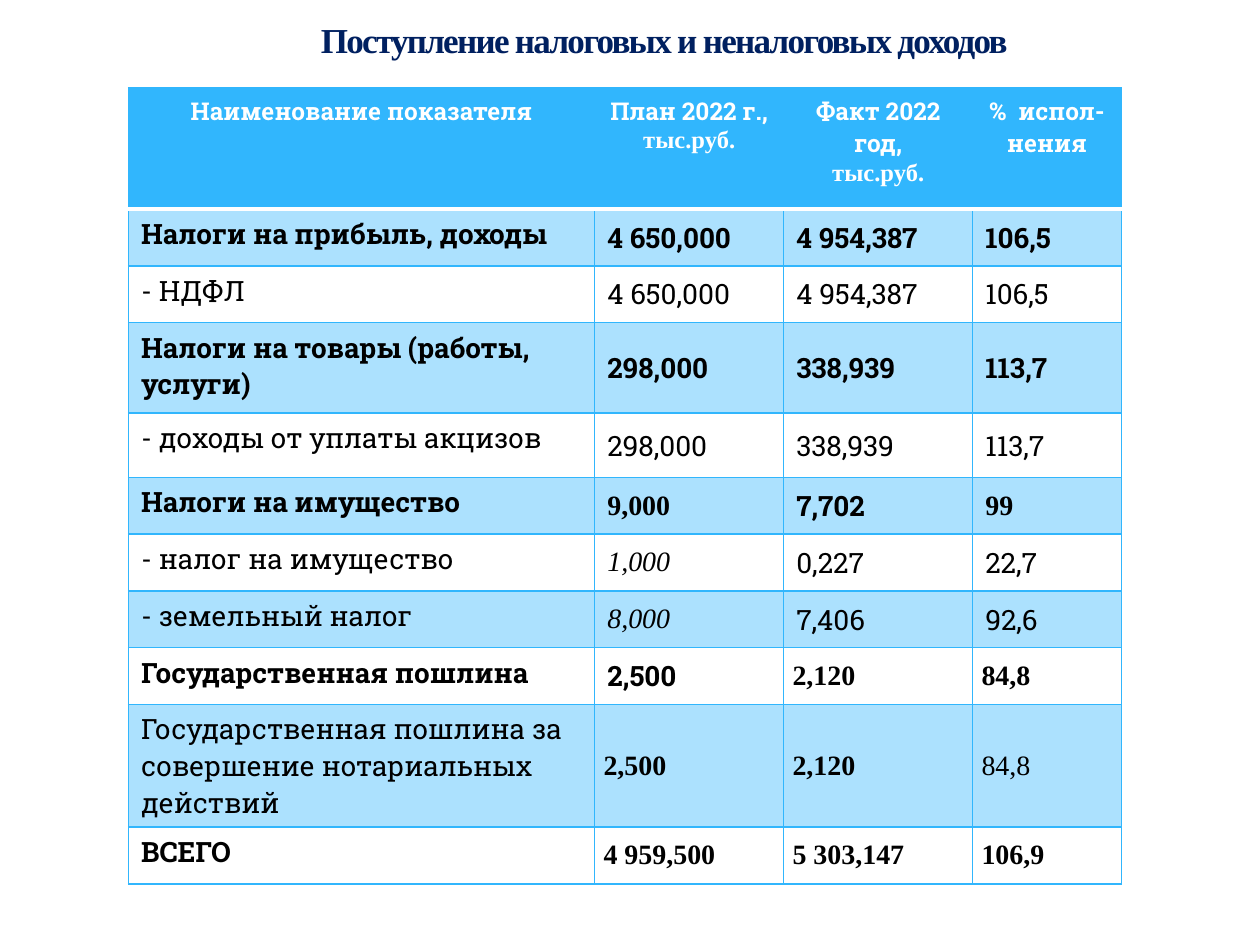
from dataclasses import dataclass

from lxml import etree
from pptx import Presentation
from pptx import util as u
from pptx.dml.color import RGBColor
from pptx.enum import text
from pptx.oxml import ns


@dataclass(frozen=True)
class Theme:
    blue: str = "31B6FD"
    navy: str = "002060"
    white: str = "FFFFFF"
    black: str = "000000"
    slab: str = "Roboto Slab"
    times: str = "Times New Roman"
    title_size: int = 20
    head_size: int = 14
    body_size: int = 16
    band_alpha: int = 40


@dataclass(frozen=True)
class Style:
    font: str
    bold: bool = False
    italic: bool = False
    tight: bool = False


THEME = Theme()
PLAIN = Style(THEME.slab)
BOLD = Style(THEME.slab, bold=True)
TIMES_BOLD = Style(THEME.times, bold=True)
TIMES_ITALIC = Style(THEME.times, italic=True)
TIGHT = Style(THEME.times, tight=True)
TIGHT_BOLD = Style(THEME.times, bold=True, tight=True)

COLUMN_WIDTHS = [3.7, 1.5, 1.5, 1.18]
ROW_HEIGHTS = [0.96, 0.45, 0.45, 0.72, 0.51, 0.45, 0.45, 0.45, 0.45, 0.71, 0.45]

TITLE = "Поступление налоговых и неналоговых доходов"
UNIT = "тыс.руб."
HEADERS = [
    ["Наименование показателя"],
    ["План 2022 г.,", UNIT],
    ["Факт 2022 год,", UNIT],
    ["%  испол-нения"],
]

# Texts of each row, then the style of each of its cells
ROWS = [
    (["Налоги на прибыль, доходы", "4 650,000", "4 954,387", "106,5"], [BOLD] * 4),
    (["- НДФЛ", "4 650,000", "4 954,387", "106,5"], [PLAIN] * 4),
    (["Налоги на товары (работы, услуги)", "298,000", "338,939", "113,7"], [BOLD] * 4),
    (["- доходы от уплаты акцизов", "298,000", "338,939", "113,7"], [PLAIN] * 4),
    (["Налоги на имущество", "9,000", "7,702", "99"],
     [BOLD, TIMES_BOLD, BOLD, TIMES_BOLD]),
    (["- налог на имущество", "1,000", "0,227", "22,7"],
     [PLAIN, TIMES_ITALIC, PLAIN, PLAIN]),
    (["- земельный налог", "8,000", "7,406", "92,6"],
     [PLAIN, TIMES_ITALIC, PLAIN, PLAIN]),
    (["Государственная пошлина", "2,500", "2,120", "84,8"],
     [BOLD, BOLD, TIGHT_BOLD, TIGHT_BOLD]),
    (["Государственная пошлина за совершение нотариальных действий",
      "2,500", "2,120", "84,8"],
     [PLAIN, TIGHT_BOLD, TIGHT_BOLD, TIGHT]),
    (["ВСЕГО", "4 959,500", "5 303,147", "106,9"],
     [BOLD, TIGHT_BOLD, TIGHT_BOLD, TIGHT_BOLD]),
]


def set_font(font, name, size, color, bold=False, italic=False):
    font.name = name
    font.size = u.Pt(size)
    font.bold = bold
    font.italic = italic
    font.color.rgb = RGBColor.from_string(color)


def set_borders(cell, special=None):
    """Draw thin blue edges, except a thick white one on the side named."""
    properties = cell._tc.get_or_add_tcPr()
    for side in ("L", "R", "T", "B"):
        color, width = (THEME.white, 3) if side == special else (THEME.blue, 1)
        line = etree.SubElement(properties, ns.qn(f"a:ln{side}"), w=str(u.Pt(width)))
        fill = etree.SubElement(line, ns.qn("a:solidFill"))
        etree.SubElement(fill, ns.qn("a:srgbClr"), val=color)


def set_fill(cell, alpha=100):
    cell.fill.solid()
    cell.fill.fore_color.rgb = RGBColor.from_string(THEME.blue)
    if alpha < 100:
        color = cell._tc.tcPr.find(ns.qn("a:solidFill")).find(ns.qn("a:srgbClr"))
        etree.SubElement(color, ns.qn("a:alpha"), val=str(alpha * 1000))


def add_title(page, left, top, width, height):
    box = page.shapes.title
    box.left, box.top, box.width, box.height = map(u.Inches, (left, top, width, height))
    frame = box.text_frame
    frame.word_wrap = True
    frame.vertical_anchor = text.MSO_ANCHOR.MIDDLE
    para = frame.paragraphs[0]
    para.alignment = text.PP_ALIGN.CENTER
    span = para.add_run()
    span.text = TITLE
    set_font(span.font, THEME.times, THEME.title_size, THEME.navy, bold=True)
    span.font._element.set("spc", "-100")


def fill_header_cell(cell, lines):
    set_borders(cell, special="B")
    set_fill(cell)
    cell.text = "\n".join(lines)
    for para in cell.text_frame.paragraphs:
        para.alignment = text.PP_ALIGN.CENTER
        name = THEME.times if para.text == UNIT else THEME.slab
        set_font(para.font, name, THEME.head_size, THEME.white, bold=True)


def fill_body_cell(cell, words, style, row, column):
    set_borders(cell, special="T" if row == 1 else None)
    if row % 2:
        set_fill(cell, THEME.band_alpha)
    else:
        cell.fill.background()
    cell.text = words
    if column:
        cell.vertical_anchor = text.MSO_ANCHOR.MIDDLE
    if style.tight:
        cell.margin_left = cell.margin_right = u.Inches(0.07)
        cell.margin_top = cell.margin_bottom = 0
    set_font(cell.text_frame.paragraphs[0].font, style.font, THEME.body_size,
             THEME.black, style.bold, style.italic)


def add_income_table(page, left, top, width, height):
    table = page.shapes.add_table(
        len(ROW_HEIGHTS), len(COLUMN_WIDTHS),
        *map(u.Inches, (left, top, width, height))).table
    table.horz_banding = False
    for column, size in zip(table.columns, COLUMN_WIDTHS):
        column.width = u.Inches(size)
    for row, size in zip(table.rows, ROW_HEIGHTS):
        row.height = u.Inches(size)

    # Header row
    for column, lines in enumerate(HEADERS):
        fill_header_cell(table.cell(0, column), lines)

    # Income rows
    for row, (words, styles) in enumerate(ROWS, start=1):
        for column, (word, style) in enumerate(zip(words, styles)):
            fill_body_cell(table.cell(row, column), word, style, row, column)


def main():
    deck = Presentation()
    deck.slide_width, deck.slide_height = u.Inches(10), u.Inches(7.5)
    page = deck.slides.add_slide(deck.slide_layouts.get_by_name("Title Only"))
    add_income_table(page, 1.02, 0.7, 7.88, 6.05)
    add_title(page, 1.61, 0, 7.32, 0.62)
    deck.save("out.pptx")


if __name__ == "__main__":
    main()
